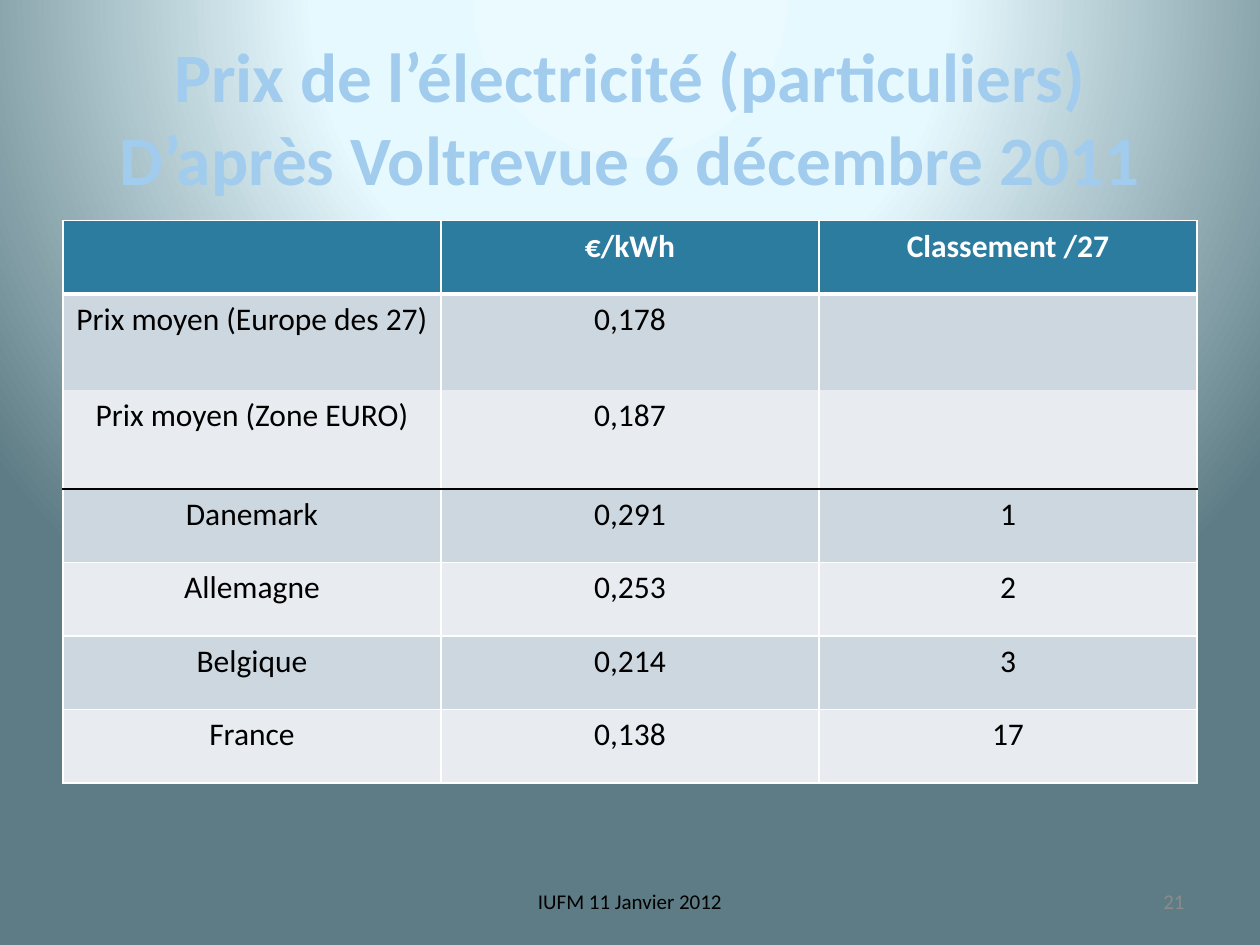
from dataclasses import dataclass

from pptx import Presentation
from pptx.dml.color import RGBColor
from pptx.enum.text import MSO_ANCHOR, MSO_AUTO_SIZE, PP_ALIGN
from pptx.oxml import parse_xml
from pptx.oxml.ns import nsdecls
from pptx.util import Cm, Pt

FONT = "Calibri"
WHITE = RGBColor(0xFF, 0xFF, 0xFF)
BLACK = RGBColor(0x00, 0x00, 0x00)
GREY = RGBColor(0x8B, 0x8B, 0x8B)
TITLE_BLUE = RGBColor(0xA1, 0xCC, 0xEE)
HEADER_BLUE = RGBColor(0x2C, 0x7C, 0x9F)
BAND_DARK = RGBColor(0xCD, 0xD7, 0xDF)
BAND_LIGHT = RGBColor(0xE8, 0xEC, 0xF0)
BACKGROUND_STOPS = [
    (0, RGBColor(0xEB, 0xFA, 0xFF)),
    (40, RGBColor(0xE6, 0xF9, 0xFF)),
    (100, RGBColor(0x5E, 0x7C, 0x85)),
]


@dataclass(frozen=True)
class Border:
    color: RGBColor
    width: float


@dataclass(frozen=True)
class PriceRow:
    cells: tuple[str, str, str]
    height: float
    top: Border | None
    bottom: Border | None


@dataclass(frozen=True)
class FooterText:
    text: str
    left: float
    width: float
    align: PP_ALIGN
    color: RGBColor


THIN = Border(WHITE, 1)
THICK = Border(WHITE, 3)
DIVIDER = Border(BLACK, 1)

ROWS = [
    PriceRow(("", "€/kWh", "Classement /27"), 1.48, THIN, THICK),
    PriceRow(("Prix moyen (Europe des 27)", "0,178", ""), 1.93, THICK, None),
    PriceRow(("Prix moyen (Zone EURO)", "0,187", ""), 2.0, None, DIVIDER),
    PriceRow(("Danemark", "0,291", "1"), 1.48, DIVIDER, THIN),
    PriceRow(("Allemagne", "0,253", "2"), 1.48, THIN, THIN),
    PriceRow(("Belgique", "0,214", "3"), 1.48, THIN, THIN),
    PriceRow(("France", "0,138", "17"), 1.48, THIN, THIN),
]
FOOTERS = [
    FooterText("IUFM 11 Janvier 2012", 8.68, 8.04, PP_ALIGN.CENTER, BLACK),
    FooterText("21", 18.2, 5.93, PP_ALIGN.RIGHT, GREY),
]


def set_background(s) -> None:
    stops = "".join(
        f'<a:gs pos="{pos * 1000}"><a:srgbClr val="{color}"/></a:gs>'
        for pos, color in BACKGROUND_STOPS
    )
    s.element.cSld.insert(0, parse_xml(
        f'<p:bg {nsdecls("p", "a")}><p:bgPr><a:gradFill rotWithShape="1">'
        f'<a:gsLst>{stops}</a:gsLst><a:path path="circle">'
        '<a:fillToRect l="50000" t="-80000" r="50000" b="180000"/></a:path>'
        '</a:gradFill><a:effectLst/></p:bgPr></p:bg>'
    ))


def write_text(tf, text: str, size: float, color: RGBColor,
               bold: bool = False, align: PP_ALIGN = PP_ALIGN.CENTER) -> None:
    p = tf.paragraphs[0]
    p.text = text
    p.alignment = align
    formats = {"name": FONT, "size": Pt(size), "bold": bold}
    for r in p.runs:
        for name, value in formats.items():
            setattr(r.font, name, value)
        r.font.color.rgb = color


def set_borders(cell, top: Border | None, bottom: Border | None) -> None:
    edges = {"L": THIN, "R": THIN, "T": top, "B": bottom}
    tc_pr = cell._tc.get_or_add_tcPr()
    for i, (side, border) in enumerate(edges.items()):
        if border:
            width = Pt(border.width)
            fill = f'<a:solidFill><a:srgbClr val="{border.color}"/></a:solidFill>'
        else:
            width, fill = 0, "<a:noFill/>"
        tc_pr.insert(i, parse_xml(
            f'<a:ln{side} {nsdecls("a")} w="{width}">{fill}</a:ln{side}>'
        ))


def add_title(s) -> None:
    title = s.shapes.title
    title.left, title.top = Cm(1.27), Cm(0.76)
    title.width, title.height = Cm(22.86), Cm(3.18)
    tf = title.text_frame
    tf.auto_size = MSO_AUTO_SIZE.NONE
    tf.vertical_anchor = MSO_ANCHOR.MIDDLE
    write_text(
        tf, "Prix de l’électricité (particuliers)\vD’après Voltrevue 6 décembre 2011",
        39.6, TITLE_BLUE, bold=True,
    )


def add_price_table(s) -> None:
    height = sum(row.height for row in ROWS)
    table = s.shapes.add_table(
        len(ROWS), 3, Cm(1.27), Cm(4.45), Cm(22.86), Cm(height)
    ).table
    for i, row in enumerate(ROWS):
        table.rows[i].height = Cm(row.height)
        is_header = i == 0
        band = BAND_DARK if i % 2 else BAND_LIGHT
        for j, text in enumerate(row.cells):
            cell = table.cell(i, j)
            cell.fill.solid()
            cell.fill.fore_color.rgb = HEADER_BLUE if is_header else band
            set_borders(cell, row.top, row.bottom)
            write_text(cell.text_frame, text, 18,
                       WHITE if is_header else BLACK, bold=is_header)


def add_footer(s, footer: FooterText) -> None:
    box = s.shapes.add_textbox(
        Cm(footer.left), Cm(17.66), Cm(footer.width), Cm(1.01)
    )
    tf = box.text_frame
    tf.word_wrap = True
    tf.vertical_anchor = MSO_ANCHOR.MIDDLE
    write_text(tf, footer.text, 12, footer.color, align=footer.align)


def main() -> None:
    prs = Presentation()
    prs.slide_width, prs.slide_height = Cm(25.4), Cm(19.05)
    s = prs.slides.add_slide(prs.slide_layouts.get_by_name("Title Only"))
    set_background(s)
    add_title(s)
    add_price_table(s)
    for footer in FOOTERS:
        add_footer(s, footer)
    prs.save("out.pptx")


if __name__ == "__main__":
    main()
